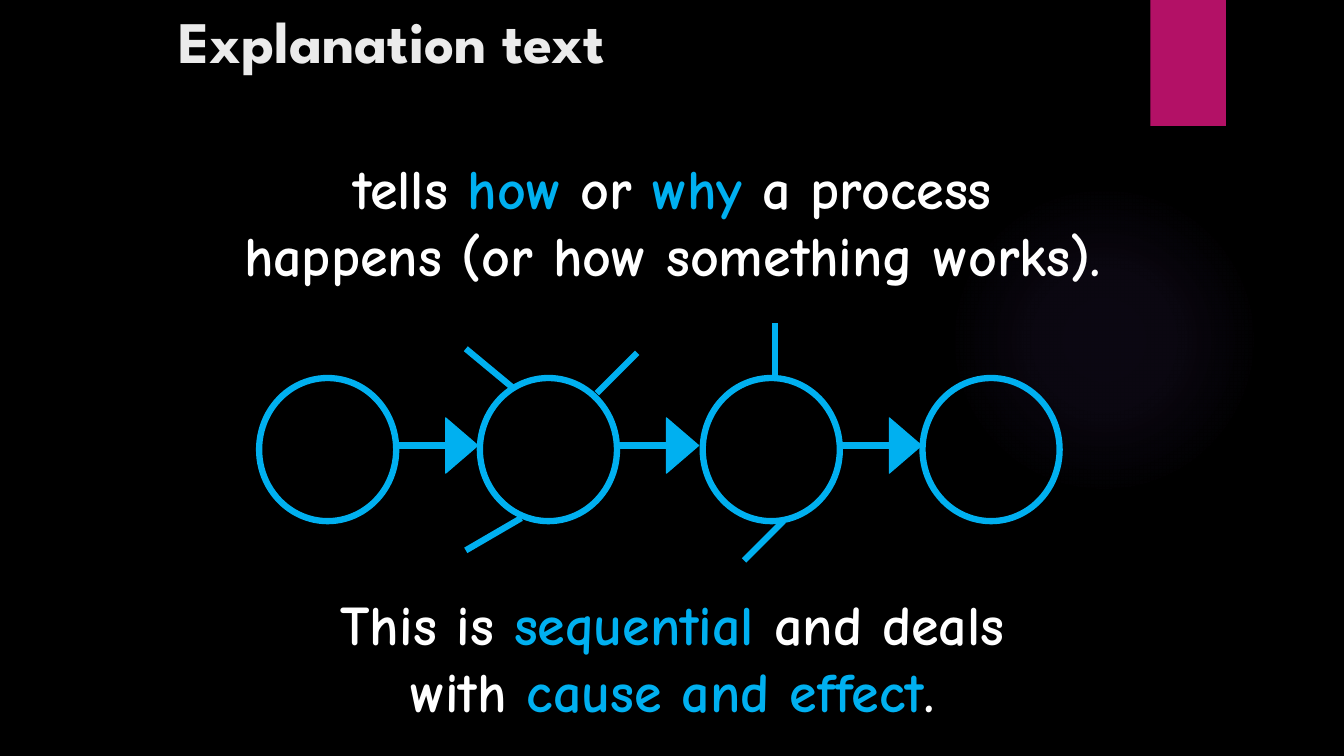
from lxml import etree
from pptx import Presentation
from pptx.dml.color import RGBColor
from pptx.enum.shapes import MSO_CONNECTOR as Connector, MSO_SHAPE as Shape
from pptx.enum.text import MSO_ANCHOR as Anchor, PP_ALIGN as Align
from pptx.oxml import parse_xml
from pptx.oxml.ns import nsdecls, qn
from pptx.util import Inches, Pt

# Content: each line is a list of (text, colour name)
TITLE = [[("Explanation text", "title")]]
DEFINITION = [
    [("tells ", "text"), ("how", "accent"), (" or ", "text"),
     ("why", "accent"), (" a process", "text")],
    [("happens (or how something works).", "text")],
]
SUMMARY = [
    [("This is ", "text"), ("sequential", "accent"), (" and deals", "text")],
    [("with ", "text"), ("cause and effect", "accent"), (".", "text")],
]

# Diagram: left edge of each step, and the causes branching off the steps
STEP_LEFTS = [2.57, 4.76, 6.97, 9.15]
STEP_TOP, STEP_WIDTH, STEP_HEIGHT = 3.75, 1.36, 1.42
ARROW_Y, SHAFT_LENGTH = 4.42, 0.75
HEAD_OFFSET, HEAD_WIDTH, HEAD_HEIGHT = 1.85, 0.32, 0.55
BRANCHES = [
    (5.09, 3.85, 4.62, 3.46),
    (5.92, 3.9, 6.32, 3.5),
    (5.17, 5.14, 4.62, 5.46),
    (7.69, 3.75, 7.69, 3.2),
    (7.77, 5.17, 7.38, 5.56),
]
GLOW_STOPS = [(0, 7), (36, 6), (69, 0), (100, 0)]  # position %, opacity %

THEME = {
    "background": "000000", "title": "EBEBEB", "text": "FFFFFF",
    "accent": "00B0F0", "tab": "B31166", "glow": "9B6BF2",
    "title_font": "League Spartan", "body_font": "Comic Neue",
    "title_size": 42, "body_size": 40, "line": 4.5, "thin_line": 0.75,
}


def color(name):
    return RGBColor.from_string(THEME[name])


def add_shape(kind, left, top, width, height, fill=None, line=None):
    shape = slide.shapes.add_shape(
        kind, Inches(left), Inches(top), Inches(width), Inches(height))
    shape.shadow.inherit = False
    if fill:
        shape.fill.solid()
        shape.fill.fore_color.rgb = color(fill)
    else:
        shape.fill.background()
    if line:
        shape.line.color.rgb = color("accent")
        shape.line.width = Pt(THEME[line])
    else:
        shape.line.fill.background()
    return shape


def add_line(x1, y1, x2, y2):
    connector = slide.shapes.add_connector(
        Connector.STRAIGHT, Inches(x1), Inches(y1), Inches(x2), Inches(y2))
    connector.line.color.rgb = color("accent")
    connector.line.width = Pt(THEME["line"])
    properties = connector._element.find(qn("p:spPr"))
    etree.SubElement(properties, qn("a:effectLst"))


def add_text(lines, top, height, role, align):
    box = slide.shapes.add_textbox(
        Inches(1.67), Inches(top), Inches(10), Inches(height))
    frame = box.text_frame
    frame.word_wrap = True
    frame.vertical_anchor = Anchor.TOP
    for index, line in enumerate(lines):
        paragraph = frame.add_paragraph() if index else frame.paragraphs[0]
        paragraph.alignment = align
        for text, color_name in line:
            run = paragraph.add_run()
            run.text = text
            run.font.name = THEME[role + "_font"]
            run.font.size = Pt(THEME[role + "_size"])
            run.font.bold = True
            run.font.color.rgb = color(color_name)


presentation = Presentation()
presentation.slide_width = Inches(13.33)
presentation.slide_height = Inches(7.5)
slide = presentation.slides.add_slide(presentation.slide_layouts[6])
slide.background.fill.solid()
slide.background.fill.fore_color.rgb = color("background")

# Soft radial glow and corner tab
glow = add_shape(Shape.OVAL, 9.41, 1.83, 3.08, 3.08)
stops = "".join(
    f'<a:gs pos="{position * 1000}"><a:srgbClr val="{THEME["glow"]}">'
    f'<a:alpha val="{opacity * 1000}"/></a:srgbClr></a:gs>'
    for position, opacity in GLOW_STOPS)
gradient = parse_xml(
    f'<a:gradFill {nsdecls("a")}><a:gsLst>{stops}</a:gsLst><a:path path="circle">'
    '<a:fillToRect l="50000" t="50000" r="50000" b="50000"/></a:path></a:gradFill>')
glow_properties = glow._element.spPr
glow_properties.replace(glow_properties.find(qn("a:noFill")), gradient)
add_shape(Shape.RECTANGLE, 11.41, 0, 0.75, 1.25, fill="tab")

# Text
add_text(TITLE, 0, 1.25, "title", Align.LEFT)
add_text(DEFINITION, 1.47, 1.43, "body", Align.CENTER)
add_text(SUMMARY, 5.8, 1.43, "body", Align.CENTER)

# Steps, with an arrow after each one but the last
for left in STEP_LEFTS:
    add_shape(Shape.OVAL, left, STEP_TOP, STEP_WIDTH, STEP_HEIGHT, line="line")
for left in STEP_LEFTS[:-1]:
    head = add_shape(Shape.RIGHT_ARROW, left + HEAD_OFFSET,
                     ARROW_Y - HEAD_HEIGHT / 2, HEAD_WIDTH, HEAD_HEIGHT,
                     fill="accent", line="thin_line")
    head.adjustments[0] = 0.47
    head.adjustments[1] = 1
    shaft_start = left + STEP_WIDTH - 0.01
    add_line(shaft_start, ARROW_Y, shaft_start + SHAFT_LENGTH, ARROW_Y)

# Branches
for branch in BRANCHES:
    add_line(*branch)

presentation.save("out.pptx")
